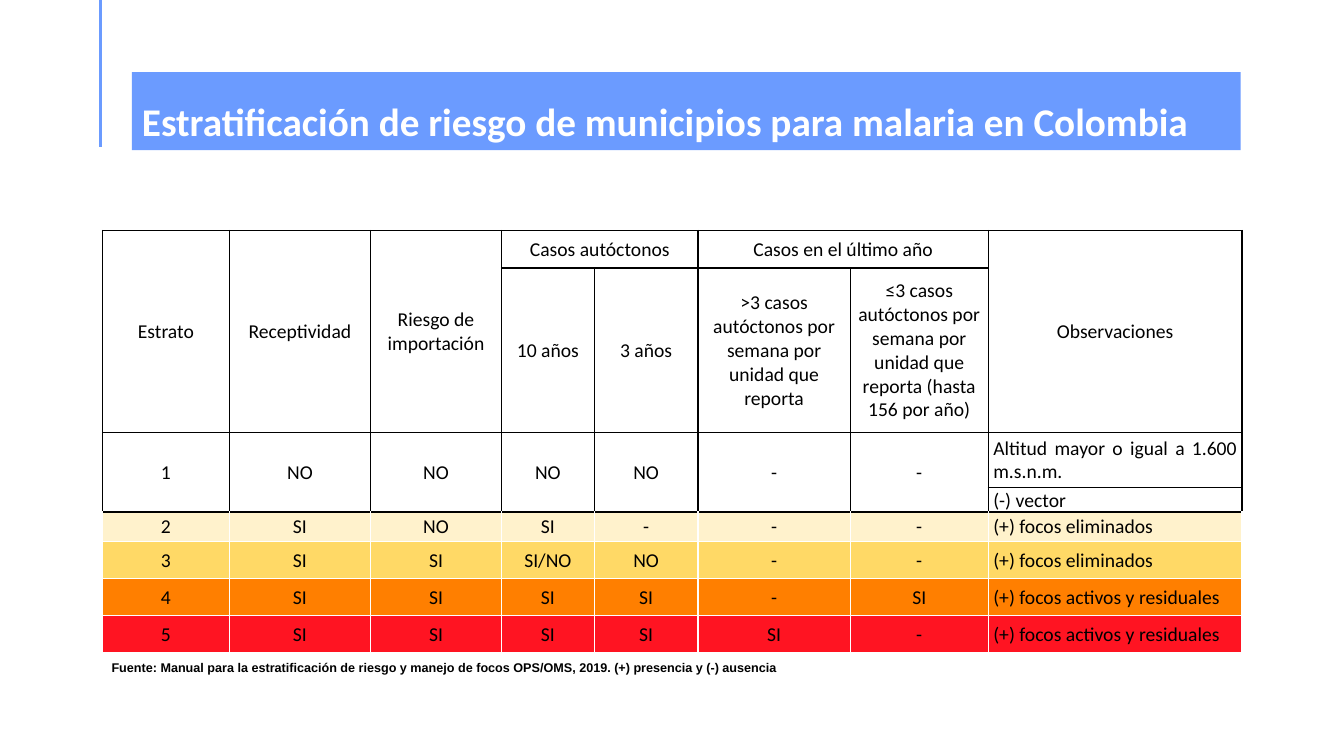
from lxml import etree
from pptx import Presentation
from pptx.dml import color
from pptx.enum import shapes, text
from pptx.oxml import ns
from pptx.util import Pt

BLUE, BLACK, WHITE = "6B9BFF", "000000", "FFFFFF"
WIDTHS = [90.7, 100.8, 93.6, 66.2, 74.2, 108.7, 98.6, 181.3]
HEIGHTS = [26.8, 117.4, 39.4, 17.6, 21, 26.6, 26.6, 26.6]
ROWS = [
    ["Estrato", "Receptividad", "Riesgo de importación", "Casos autóctonos", "",
     "Casos en el último año", "", "Observaciones"],
    ["", "", "", "10 años", "3 años",
     ">3 casos autóctonos por semana por unidad que reporta",
     "≤3 casos autóctonos por semana por unidad que reporta (hasta 156 por año)", ""],
    ["1", "NO", "NO", "NO", "NO", "-", "-", "Altitud mayor o igual a 1.600 m.s.n.m."],
    ["", "", "", "", "", "", "", "(-) vector"],
    ["2", "SI", "NO", "SI", "-", "-", "-", "(+) focos eliminados"],
    ["3", "SI", "SI", "SI/NO", "NO", "-", "-", "(+) focos eliminados"],
    ["4", "SI", "SI", "SI", "SI", "-", "SI", "(+) focos activos y residuales"],
    ["5", "SI", "SI", "SI", "SI", "SI", "-", "(+) focos activos y residuales"],
]
FILLS = [WHITE] * 4 + ["FFF2CC", "FFD966", "FF7F00", "FF1422"]
HEADER_ROWS, STRATUM_1_END = 2, 4
SPANS = ([(0, col, 1, col) for col in (0, 1, 2, 7)]
         + [(0, col, 0, col + 1) for col in (3, 5)]
         + [(2, col, 3, col) for col in range(7)])
NO_STYLE = "{2D5ABB26-0587-4C30-8999-92F81FD0307C}"


def rgb(value):
    return color.RGBColor.from_string(value)


def add_run(paragraph, words, size, font, colour, bold=False):
    run = paragraph.add_run()
    run.text = words
    run.font.size, run.font.name, run.font.bold = Pt(size), font, bold
    run.font.color.rgb = rgb(colour)


def add_band(slide, left, top, width, height):
    band = slide.shapes.add_shape(shapes.MSO_SHAPE.RECTANGLE,
                                  Pt(left), Pt(top), Pt(width), Pt(height))
    band.shadow.inherit = False
    band.fill.solid()
    band.fill.fore_color.rgb = rgb(BLUE)
    band.line.fill.background()


def add_rule(slide, x, top, bottom):
    rule = slide.shapes.add_connector(shapes.MSO_CONNECTOR.STRAIGHT,
                                      Pt(x), Pt(top), Pt(x), Pt(bottom))
    rule.line.color.rgb = rgb(BLUE)
    rule.line.width = Pt(2.25)
    etree.SubElement(rule._element.spPr, ns.qn("a:effectLst"))


def add_label(slide, place, words, size, font, colour, anchor, spacing=1.0):
    frame = slide.shapes.add_textbox(*map(Pt, place)).text_frame
    frame.word_wrap = True
    frame.vertical_anchor = anchor
    frame.paragraphs[0].line_spacing = spacing
    add_run(frame.paragraphs[0], words, size, font, colour, True)


def set_border(cell, side, colour):
    edge = etree.SubElement(cell._tc.get_or_add_tcPr(), ns.qn(f"a:ln{side}"), w=str(Pt(1)))
    fill = etree.SubElement(edge, ns.qn("a:solidFill"))
    etree.SubElement(fill, ns.qn("a:srgbClr"), val=colour)


def outer_sides(row, col):
    top, left, bottom, right = next(
        (s for s in SPANS if s[0] <= row <= s[2] and s[1] <= col <= s[3]),
        (row, col, row, col))
    edges = {"L": col == left, "R": col == right, "T": row == top, "B": row == bottom}
    return [side for side, is_outer in edges.items() if is_outer]


def fill_cell(cell, row, col):
    for side in outer_sides(row, col):
        is_black = row < STRATUM_1_END or (row == STRATUM_1_END and side == "T")
        set_border(cell, side, BLACK if is_black else WHITE)
    cell.fill.solid()
    cell.fill.fore_color.rgb = rgb(FILLS[row])
    cell.margin_left = cell.margin_right = Pt(3.6)
    cell.margin_top, cell.margin_bottom = Pt(0.7), Pt(0)
    cell.vertical_anchor = text.MSO_ANCHOR.MIDDLE
    paragraph = cell.text_frame.paragraphs[0]
    is_observation = col == len(WIDTHS) - 1 and row >= HEADER_ROWS
    paragraph.alignment = text.PP_ALIGN.JUSTIFY if is_observation else text.PP_ALIGN.CENTER
    if ROWS[row][col]:
        add_run(paragraph, ROWS[row][col], 14, "Calibri", BLACK)
    else:
        paragraph.font.size = Pt(14)


def add_strata(slide, left, top):
    strata = slide.shapes.add_table(len(ROWS), len(WIDTHS), Pt(left), Pt(top),
                                    Pt(sum(WIDTHS)), Pt(sum(HEIGHTS))).table
    strata.first_row = strata.horz_banding = False
    strata._tbl.tblPr.find(ns.qn("a:tableStyleId")).text = NO_STYLE
    for column, width in zip(strata.columns, WIDTHS):
        column.width = Pt(width)
    for line, height in zip(strata.rows, HEIGHTS):
        line.height = Pt(height)
    for top_row, first, bottom_row, last in SPANS:
        strata.cell(top_row, first).merge(strata.cell(bottom_row, last))
    for row in range(len(ROWS)):
        for col in range(len(WIDTHS)):
            fill_cell(strata.cell(row, col), row, col)


def main():
    deck = Presentation()
    deck.slide_width, deck.slide_height = Pt(960), Pt(540)
    slide = deck.slides.add_slide(deck.slide_layouts[6])
    add_band(slide, 94.3, 51.6, 792, 55.6)
    add_rule(slide, 72, 0, 105)
    add_label(slide, (94.3, 51.6, 767, 55.6),
              "Estratificación de riesgo de municipios para malaria en Colombia",
              28, "Calibri", WHITE, text.MSO_ANCHOR.BOTTOM, 0.9)
    add_strata(slide, 73.2, 164.6)
    add_label(slide, (72.6, 468, 514, 18),
              "Fuente: Manual para la estratificación de riesgo y manejo de focos OPS/OMS, 2019. "
              "(+) presencia y (-) ausencia",
              9, "Arial", BLACK, text.MSO_ANCHOR.TOP)
    deck.save("out.pptx")


if __name__ == "__main__":
    main()
